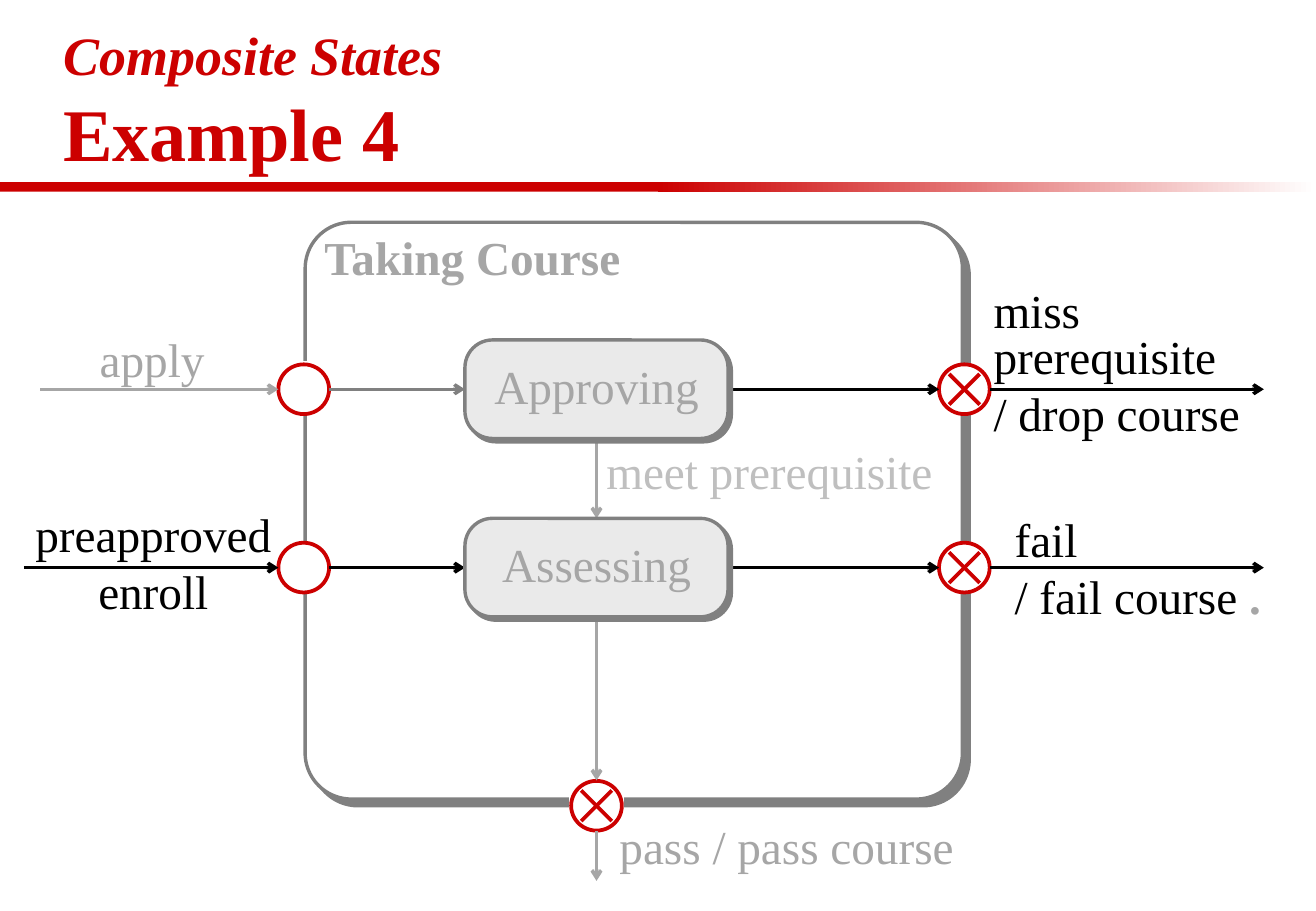
from dataclasses import dataclass

from lxml import etree
from pptx import Presentation
from pptx import util as u
from pptx.dml.color import RGBColor
from pptx.enum import shapes, text
from pptx.oxml.ns import qn


@dataclass(frozen=True)
class Theme:
    font: str = "Times New Roman"
    red: str = "CC0000"
    white: str = "FFFFFF"
    black: str = "000000"
    border: str = "808080"
    faded: str = "A6A6A6"
    pale: str = "BFBFBF"
    state: str = "EAEAEA"
    topic_size: float = 32
    title_size: float = 44
    title_leading: float = 53
    size: float = 28
    leading: float = 33.75
    tight_leading: float = 27
    line: float = 2
    ring_line: float = 2.25


@dataclass(frozen=True)
class Box:
    """A rectangle in centimetres."""
    left: float
    top: float
    width: float
    height: float

    def lengths(self):
        return [u.Cm(value) for value in (self.left, self.top, self.width, self.height)]


THEME = Theme()
STATE_WIDTH, STATE_HEIGHT = 5.5, 2.06
RING_WIDTH, RING_HEIGHT = 1.06, 1.04
CROSS = 0.32


def rgb(colour):
    return RGBColor.from_string(colour)


def add_span(para, words, colour, size=THEME.size, bold=False, italic=False):
    span = para.add_run()
    span.text = words
    span.font.name = THEME.font
    span.font.size = u.Pt(size)
    span.font.bold = bold
    span.font.italic = italic
    span.font.color.rgb = rgb(colour)


def add_outline(slide, kind, box, fill, line=None, weight=THEME.line):
    shape = slide.shapes.add_shape(kind, *box.lengths())
    shape.fill.solid()
    shape.fill.fore_color.rgb = rgb(fill)
    if line:
        shape.line.color.rgb = rgb(line)
        shape.line.width = u.Pt(weight)
    else:
        shape.line.fill.background()
    shape.shadow.inherit = False
    return shape


def add_rounded(slide, box, fill, corner, offset):
    """Rounded rectangle with a solid shadow towards the lower right."""
    shape = add_outline(slide, shapes.MSO_SHAPE.ROUNDED_RECTANGLE, box, fill, THEME.border)
    shape.adjustments[0] = corner
    effects = shape._element.spPr.find(qn("a:effectLst"))
    shadow = etree.SubElement(effects, qn("a:outerShdw"), dist=str(u.Cm(offset)),
                              dir="2700000", algn="ctr", rotWithShape="0")
    etree.SubElement(shadow, qn("a:srgbClr"), val=THEME.border)
    return shape


def add_line(slide, start, end, colour, weight=THEME.line, arrow=True):
    points = [u.Cm(value) for value in (*start, *end)]
    line = slide.shapes.add_connector(shapes.MSO_CONNECTOR.STRAIGHT, *points)
    line.line.color.rgb = rgb(colour)
    line.line.width = u.Pt(weight)
    if arrow:
        etree.SubElement(line.line._get_or_add_ln(), qn("a:tailEnd"), type="arrow")
    etree.SubElement(line._element.spPr, qn("a:effectLst"))


def add_label(slide, box, paragraphs, colour, centred=False, bold=False):
    """Each paragraph is a pair of wording and line spacing."""
    frame = slide.shapes.add_textbox(*box.lengths()).text_frame
    frame.word_wrap = True
    for index, (words, leading) in enumerate(paragraphs):
        para = frame.add_paragraph() if index else frame.paragraphs[0]
        para.alignment = text.PP_ALIGN.CENTER if centred else text.PP_ALIGN.LEFT
        para.line_spacing = u.Pt(leading)
        add_span(para, words, colour, bold=bold)
    return frame


def add_port(slide, x, y, is_exit):
    """Entry or exit point centred on x, y."""
    ring = Box(x - RING_WIDTH / 2, y - RING_HEIGHT / 2, RING_WIDTH, RING_HEIGHT)
    add_outline(slide, shapes.MSO_SHAPE.OVAL, ring, THEME.white, THEME.red, THEME.ring_line)
    if is_exit:
        for rise in (CROSS, -CROSS):
            add_line(slide, (x - CROSS, y - rise), (x + CROSS, y + rise),
                     THEME.red, THEME.ring_line, arrow=False)


def add_state(slide, x, y, name):
    """Simple state centred on x, y."""
    box = Box(x - STATE_WIDTH / 2, y - STATE_HEIGHT / 2, STATE_WIDTH, STATE_HEIGHT)
    frame = add_rounded(slide, box, THEME.state, 0.28, 0.1).text_frame
    frame.word_wrap = False
    frame.vertical_anchor = text.MSO_ANCHOR.MIDDLE
    frame.margin_top, frame.margin_bottom = 0, u.Cm(0.16)
    para = frame.paragraphs[0]
    para.alignment = text.PP_ALIGN.CENTER
    para.line_spacing = u.Pt(THEME.leading)
    add_span(para, name, THEME.faded)


def add_heading(slide, box, topic, title):
    frame = slide.shapes.add_textbox(*box.lengths()).text_frame
    frame.word_wrap = True
    frame.vertical_anchor = text.MSO_ANCHOR.BOTTOM
    para = frame.paragraphs[0]
    para.line_spacing = u.Pt(THEME.title_leading)
    add_span(para, topic, THEME.red, THEME.topic_size, bold=True, italic=True)
    para.add_line_break()
    add_span(para, title, THEME.red, THEME.title_size, bold=True)


def add_rule(slide, box):
    """Band that is solid on the left half and fades out on the right half."""
    half = box.width / 2
    kind = shapes.MSO_SHAPE.RECTANGLE
    add_outline(slide, kind, Box(box.left, box.top, half, box.height), THEME.red)
    fade = add_outline(slide, kind, Box(box.left + half, box.top, half, box.height), THEME.red)
    fade.fill.gradient()
    fade.fill.gradient_angle = 0
    for stop, colour, position in zip(fade.fill.gradient_stops, (THEME.red, THEME.white), (0, 1)):
        stop.color.rgb = rgb(colour)
        stop.position = position


def add_composite_state(slide, box):
    """Composite state in the box, with its ports, transitions and labels around it."""
    left, right, bottom = box.left, box.left + box.width, box.top + box.height
    middle, pass_y = left + 6.09, bottom + 0.14
    approve_y, assess_y = box.top + 3.49, box.top + 7.22
    radius, half_height = RING_WIDTH / 2, STATE_HEIGHT / 2
    entry_x, exit_x = left - 0.03, right + 0.04
    state_left, state_right = middle - STATE_WIDTH / 2, middle + STATE_WIDTH / 2

    add_rounded(slide, box, THEME.white, 0.08, 0.2)
    gaps = (Box(middle - 0.53, pass_y - 1.31, 1.07, 1.78),
            Box(left - 0.46, approve_y - 0.55, 1.78, 1.07))
    for gap in gaps:
        add_outline(slide, shapes.MSO_SHAPE.RECTANGLE, gap, THEME.white,
                    THEME.white, THEME.ring_line)

    rows = ((approve_y, "Approving", left - 5.54, THEME.faded, THEME.border),
            (assess_y, "Assessing", left - 5.88, THEME.black, THEME.black))
    for y, name, start, outer, inner in rows:
        add_port(slide, entry_x, y, is_exit=False)
        add_port(slide, exit_x, y, is_exit=True)
        add_line(slide, (start, y), (entry_x - radius, y), outer)
        add_line(slide, (entry_x + radius, y), (state_left, y), inner)
        add_line(slide, (state_right, y), (exit_x - radius, y), THEME.black)
        add_line(slide, (exit_x + radius, y), (right + 6.3, y), THEME.black)
    add_port(slide, middle, pass_y, is_exit=True)
    for start, end in ((approve_y, assess_y - half_height),
                       (assess_y, pass_y - radius),
                       (pass_y + radius, pass_y + 1.57)):
        add_line(slide, (middle, start), (middle, end), THEME.faded)
    for y, name, *_ in rows:
        add_state(slide, middle, y, name)

    def label(x, y, width, height, *paragraphs, colour=THEME.faded, **style):
        place = Box(left + x, box.top + y, width, height)
        return add_label(slide, place, paragraphs, colour, **style)

    full = THEME.leading
    label(0.15, 0, 8.51, 1.45, ("Taking Course", full), bold=True)
    label(-5.74, 2.13, 5.08, 1.45, ("apply", full), centred=True)
    label(-5.97, 5.79, 5.59, 2.64, ("preapproved enroll", full),
          colour=THEME.black, centred=True)
    label(6.02, 4.47, 7.37, 1.45, ("meet prerequisite", full), colour=THEME.pale, centred=True)
    label(6.32, 12.32, 10.16, 1.45, ("pass / pass course", full))
    label(14.14, 1.34, 5.92, 3.7, ("miss prerequisite", THEME.tight_leading),
          ("/ drop course", full), colour=THEME.black)
    fail = label(14.58, 5.89, 5.92, 2.64, ("fail", full), ("/ fail course ", full),
                 colour=THEME.black)
    add_span(fail.paragraphs[-1], ".", THEME.faded, bold=True)


def main():
    deck = Presentation()
    deck.slide_width, deck.slide_height = u.Cm(27.51), u.Cm(19.05)
    slide = deck.slides.add_slide(deck.slide_layouts[6])
    add_rule(slide, Box(0, 3.81, 27.51, 0.2))
    add_heading(slide, Box(1.07, 0.74, 25.4, 3.07), "Composite States", "Example 4")
    add_composite_state(slide, Box(6.38, 4.65, 13.74, 12.06))
    deck.save("out.pptx")


if __name__ == "__main__":
    main()
